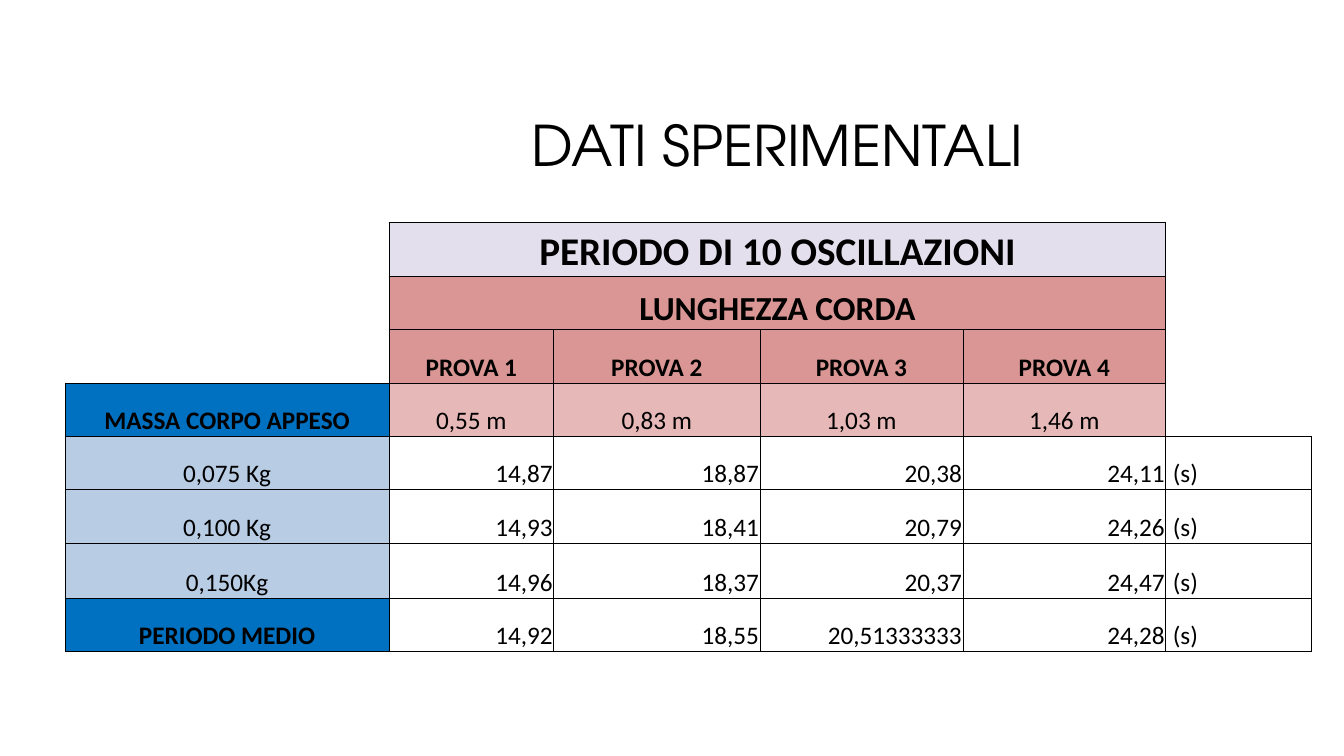
from dataclasses import dataclass

import pptx
import pptx.dml.color
import pptx.enum.text
import pptx.oxml
import pptx.oxml.ns
import pptx.util

ALIGN = pptx.enum.text.PP_ALIGN
ANCHOR = pptx.enum.text.MSO_ANCHOR
SLIDE_WIDTH = pptx.util.Inches(13.33)
SLIDE_HEIGHT = pptx.util.Inches(7.5)


@dataclass(frozen=True)
class Theme:
    title_font: str = "TeX Gyre Adventor"
    table_font: str = "Calibri"
    ink: str = "000000"
    period_fill: str = "E4DFEC"
    length_fill: str = "DA9694"
    length_value_fill: str = "E6B8B7"
    mass_fill: str = "0070C0"
    mass_value_fill: str = "B8CCE4"
    title_size: int = 40
    period_size: int = 28
    length_size: int = 24
    body_size: int = 18
    border_width: float = 0.5


THEME = Theme()


@dataclass(frozen=True)
class Entry:
    text: str
    fill: str | None = None
    bold: bool = False
    size: int = THEME.body_size
    align: ALIGN = ALIGN.CENTER
    left_inset: float = 0.01
    columns: int = 1


# Table grid, in percent of the slide's width and height
COLUMN_SHARES = (24.1, 12.25, 15.35, 15.1, 15.1, 10.8)
ROW_SHARES = (7.07,) * 6 + (7.25, 7.07)
TABLE_LEFT, TABLE_TOP = 4.85, 29.45

# Measured periods by mass, then the mean period
MEASUREMENTS = (
    ("0,075 Kg", ("14,87", "18,87", "20,38", "24,11")),
    ("0,100 Kg", ("14,93", "18,41", "20,79", "24,26")),
    ("0,150Kg", ("14,96", "18,37", "20,37", "24,47")),
    ("PERIODO MEDIO", ("14,92", "18,55", "20,51333333", "24,28")),
)
LENGTHS = ("0,55 m", "0,83 m", "1,03 m", "1,46 m")


def across(percent: float) -> int:
    return round(SLIDE_WIDTH * percent / 100)


def down(percent: float) -> int:
    return round(SLIDE_HEIGHT * percent / 100)


def table_entries() -> dict[tuple[int, int], Entry]:
    """Place every filled entry by row and column."""
    entries = {
        (0, 1): Entry("PERIODO DI 10 OSCILLAZIONI", THEME.period_fill, True,
                      THEME.period_size, columns=4),
        (1, 1): Entry("LUNGHEZZA CORDA", THEME.length_fill, True,
                      THEME.length_size, columns=4),
        (3, 0): Entry("MASSA CORPO APPESO", THEME.mass_fill, True),
    }
    for column, length in enumerate(LENGTHS, start=1):
        entries[2, column] = Entry(f"PROVA {column}", THEME.length_fill, True)
        entries[3, column] = Entry(length, THEME.length_value_fill)
    for row, (label, periods) in enumerate(MEASUREMENTS, start=4):
        mean = row == len(ROW_SHARES) - 1
        fill = THEME.mass_fill if mean else THEME.mass_value_fill
        entries[row, 0] = Entry(label, fill, mean)
        for column, period in enumerate(periods, start=1):
            entries[row, column] = Entry(period, align=ALIGN.RIGHT)
        entries[row, 5] = Entry("(s)", align=ALIGN.LEFT, left_inset=0.07)
    return entries


def style_paragraph(paragraph, font_name: str, size: int, bold: bool, align: ALIGN) -> None:
    paragraph.alignment = align
    for run in paragraph.runs:
        run.font.name = font_name
        run.font.size = pptx.util.Pt(size)
        run.font.bold = bold
        run.font.color.rgb = pptx.dml.color.RGBColor.from_string(THEME.ink)


def set_border(cell, side: str, visible: bool) -> None:
    """Add one cell edge; edges go before the fill in the cell properties."""
    paint = (f'<a:solidFill><a:srgbClr val="{THEME.ink}"/></a:solidFill>'
             if visible else "<a:noFill/>")
    line = pptx.oxml.parse_xml(
        f'<a:ln{side} {pptx.oxml.ns.nsdecls("a")} '
        f'w="{pptx.util.Pt(THEME.border_width)}">{paint}</a:ln{side}>')
    cell._tc.get_or_add_tcPr().append(line)


def fill_cell(cell, entry: Entry) -> None:
    cell.text_frame.text = entry.text
    cell.vertical_anchor = ANCHOR.BOTTOM
    cell.margin_left = pptx.util.Inches(entry.left_inset)
    cell.margin_right = cell.margin_top = pptx.util.Inches(0.01)
    cell.margin_bottom = 0
    style_paragraph(cell.text_frame.paragraphs[0], THEME.table_font,
                    entry.size, entry.bold, entry.align)


def add_title(slide) -> None:
    shape = slide.shapes.add_textbox(across(6.25), down(10.25), across(70.65), down(18.8))
    text_frame = shape.text_frame
    text_frame.word_wrap = True
    text_frame.vertical_anchor = ANCHOR.MIDDLE
    text_frame.text = "DATI SPERIMENTALI"
    paragraph = text_frame.paragraphs[0]
    paragraph.line_spacing = 0.9
    style_paragraph(paragraph, THEME.title_font, THEME.title_size, False, ALIGN.RIGHT)


def add_data_table(slide) -> None:
    shape = slide.shapes.add_table(
        len(ROW_SHARES), len(COLUMN_SHARES), across(TABLE_LEFT), down(TABLE_TOP),
        across(sum(COLUMN_SHARES)), down(sum(ROW_SHARES)))
    table = shape.table
    table.first_row = table.horz_banding = False
    for column, share in zip(table.columns, COLUMN_SHARES):
        column.width = across(share)
    for row, share in zip(table.rows, ROW_SHARES):
        row.height = down(share)

    entries = table_entries()
    boxed = {(row, column + offset) for (row, column), entry in entries.items()
             for offset in range(entry.columns)}

    # An edge shows wherever it touches a boxed cell
    neighbours = {"L": (0, -1), "R": (0, 1), "T": (-1, 0), "B": (1, 0)}
    for row in range(len(ROW_SHARES)):
        for column in range(len(COLUMN_SHARES)):
            cell = table.cell(row, column)
            for side, (row_step, column_step) in neighbours.items():
                beside = (row + row_step, column + column_step)
                set_border(cell, side, (row, column) in boxed or beside in boxed)
            entry = entries.get((row, column))
            if entry and entry.fill:
                cell.fill.solid()
                cell.fill.fore_color.rgb = pptx.dml.color.RGBColor.from_string(entry.fill)
            else:
                cell.fill.background()
            if entry:
                fill_cell(cell, entry)

    # Headings across the four trials
    for (row, column), entry in entries.items():
        if entry.columns > 1:
            table.cell(row, column).merge(table.cell(row, column + entry.columns - 1))


def main() -> None:
    presentation = pptx.Presentation()
    presentation.slide_width = SLIDE_WIDTH
    presentation.slide_height = SLIDE_HEIGHT
    slide = presentation.slides.add_slide(presentation.slide_layouts[6])
    add_title(slide)
    add_data_table(slide)
    presentation.save("out.pptx")


if __name__ == "__main__":
    main()
